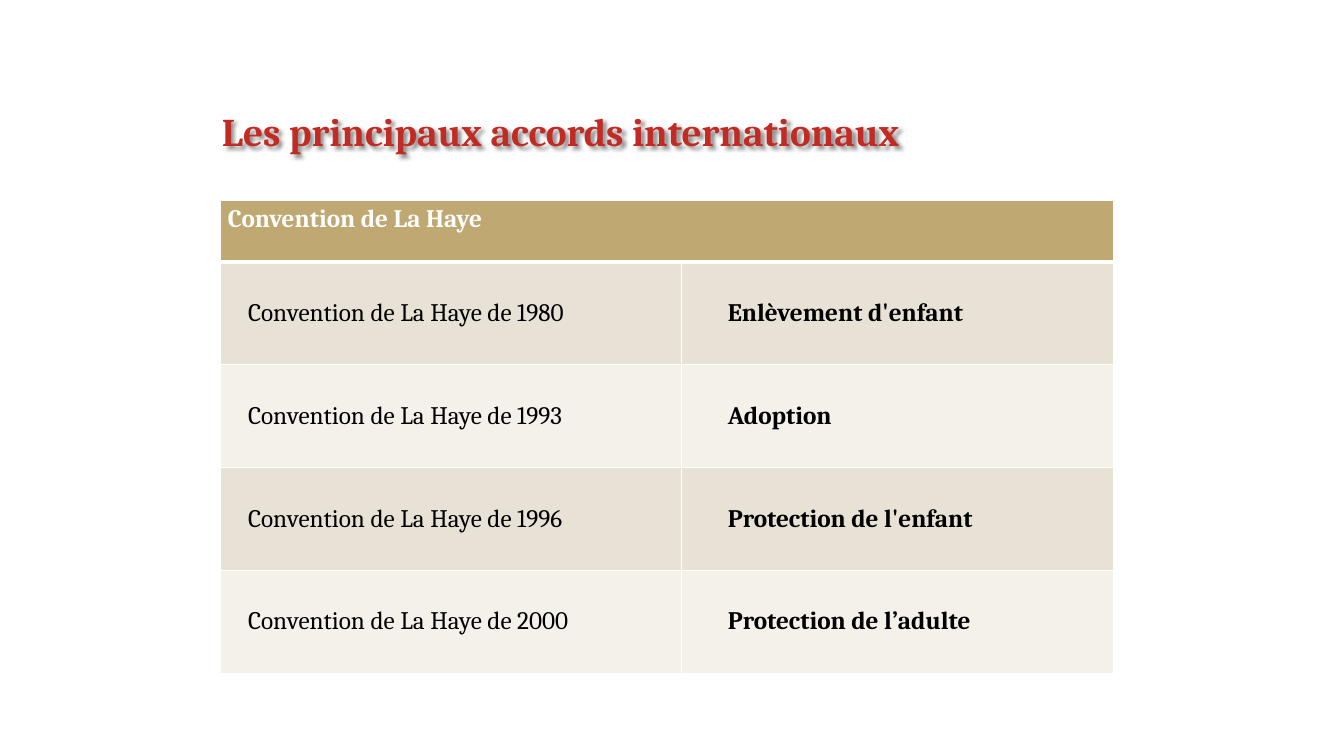
import lxml.etree
import pptx
import pptx.dml.color
import pptx.enum.text
import pptx.oxml.ns
import pptx.util

SLIDE_WIDTH = pptx.util.Inches(13.33)
SLIDE_HEIGHT = pptx.util.Inches(7.5)
FONT = "Cambria"
COLORS = {
    "paper": "FEFFFE",
    "title": "C12B23",
    "header": "C0A872",
    "odd": "E8E1D5",
    "even": "F4F1EB",
    "text": "000000",
    "shadow": "000000",
}
CONVENTIONS = [
    ("Convention de La Haye de 1980", "Enlèvement d'enfant"),
    ("Convention de La Haye de 1993", "Adoption"),
    ("Convention de La Haye de 1996", "Protection de l'enfant"),
    ("Convention de La Haye de 2000", "Protection de l’adulte"),
]
COLUMN_SHARES = (34.28, 32.18)
INDENTS = (0.2, 0.39)
HEADER_SHARE = 8.13
ROW_SHARE = 13.6


def across(percent):
    """Return a share of the slide width."""
    return round(SLIDE_WIDTH * percent / 100)


def down(percent):
    """Return a share of the slide height."""
    return round(SLIDE_HEIGHT * percent / 100)


def rgb(name):
    """Return the named colour."""
    return pptx.dml.color.RGBColor.from_string(COLORS[name])


def child(parent, tag, **attributes):
    """Append a DrawingML element to parent."""
    return lxml.etree.SubElement(parent, pptx.oxml.ns.qn(tag), attributes)


def write(frame, text, size=18, color="text", bold=False, indent=0):
    """Put one formatted paragraph in a text frame."""
    paragraph = frame.paragraphs[0]
    properties = paragraph._p.get_or_add_pPr()
    properties.set("marL", str(pptx.util.Inches(indent)))
    properties.set("indent", "0")
    run = paragraph.add_run()
    run.text = text
    run.font.name = FONT
    run.font.size = pptx.util.Pt(size)
    run.font.bold = bold
    run.font.color.rgb = rgb(color)


def cast_shadow(box):
    """Give a text box a soft shadow to the lower right."""
    effects = child(box._element.spPr, "a:effectLst")
    shadow = child(effects, "a:outerShdw", blurRad="38100", dist="38100",
                   dir="2700000", algn="tl")
    tint = child(shadow, "a:srgbClr", val=COLORS["shadow"])
    child(tint, "a:alpha", val="43000")


def add_title(slide, text):
    """Add the shadowed title."""
    title = slide.shapes.add_textbox(across(15.83), down(14.13), across(65.34), down(4.27))
    frame = title.text_frame
    frame.word_wrap = True
    frame.margin_left = frame.margin_right = frame.margin_top = frame.margin_bottom = 0
    write(frame, text, size=28, color="title", bold=True, indent=0.09)
    cast_shadow(title)


def style_cell(cell, fill, bottom=1):
    """Set the borders, margins and fill of a cell."""
    properties = cell._tc.get_or_add_tcPr()
    for side, width in (("L", 1), ("R", 1), ("T", 1), ("B", bottom)):
        border = child(properties, f"a:ln{side}", w=str(pptx.util.Pt(width)))
        child(child(border, "a:solidFill"), "a:srgbClr", val=COLORS["paper"])
    cell.margin_left = cell.margin_right = pptx.util.Inches(0.07)
    cell.margin_top = cell.margin_bottom = pptx.util.Inches(0.04)
    cell.fill.solid()
    cell.fill.fore_color.rgb = rgb(fill)


def add_agreements(slide, heading, conventions):
    """Add the table of conventions under a merged heading."""
    height = HEADER_SHARE + ROW_SHARE * len(conventions)
    agreements = slide.shapes.add_table(
        len(conventions) + 1, len(COLUMN_SHARES), across(16.43), down(26.53),
        across(sum(COLUMN_SHARES)), down(height)).table
    for column, share in zip(agreements.columns, COLUMN_SHARES):
        column.width = across(share)
    for number, row in enumerate(agreements.rows):
        row.height = down(ROW_SHARE if number else HEADER_SHARE)

    for header in agreements.rows[0].cells:
        style_cell(header, "header", bottom=3)
    agreements.cell(0, 0).merge(agreements.cell(0, len(COLUMN_SHARES) - 1))
    write(agreements.cell(0, 0).text_frame, heading, color="paper", bold=True)

    for number, convention in enumerate(conventions, start=1):
        for column, text in enumerate(convention):
            cell = agreements.cell(number, column)
            style_cell(cell, "odd" if number % 2 else "even")
            cell.vertical_anchor = pptx.enum.text.MSO_ANCHOR.MIDDLE
            write(cell.text_frame, text, bold=column == 1, indent=INDENTS[column])


def main():
    """Build and save the slide."""
    deck = pptx.Presentation()
    deck.slide_width = SLIDE_WIDTH
    deck.slide_height = SLIDE_HEIGHT
    slide = deck.slides.add_slide(deck.slide_layouts[6])
    slide.background.fill.solid()
    slide.background.fill.fore_color.rgb = rgb("paper")
    add_title(slide, "Les principaux accords internationaux")
    add_agreements(slide, "Convention de La Haye", CONVENTIONS)
    deck.save("out.pptx")


if __name__ == "__main__":
    main()
